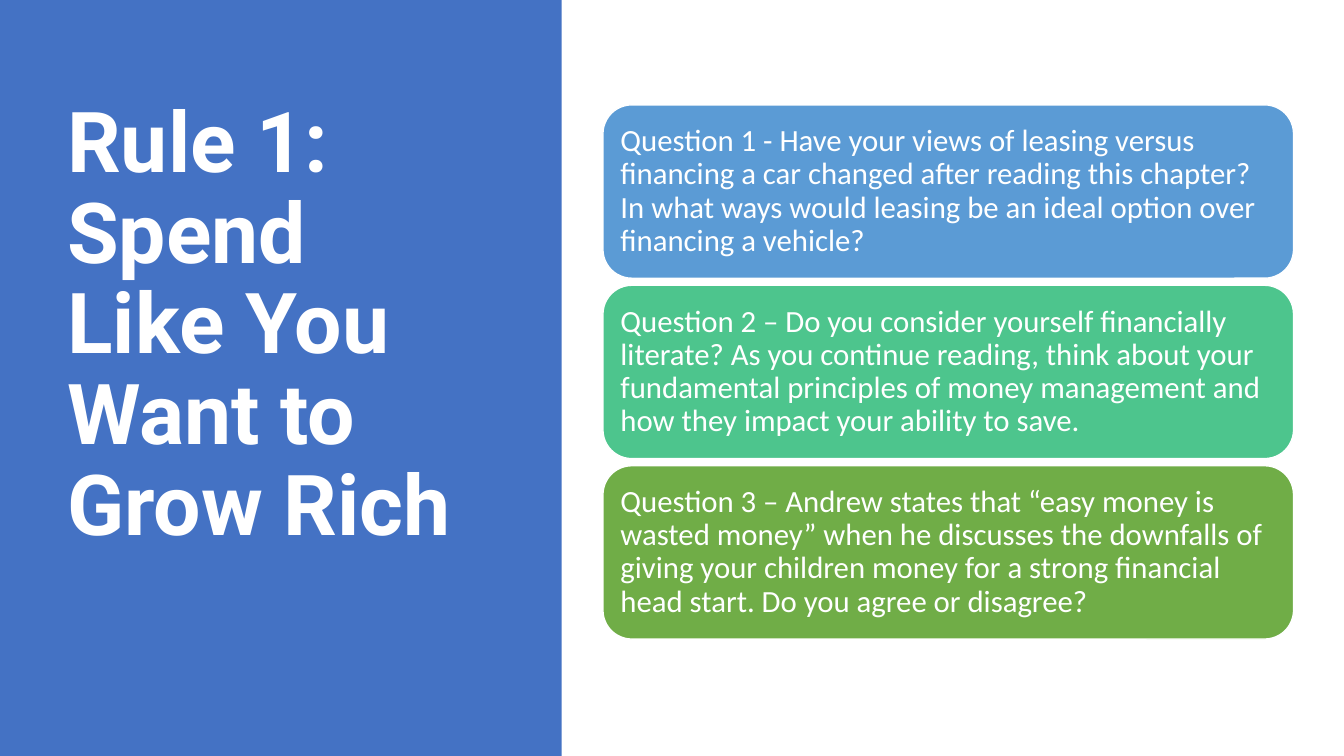
import pptx
import pptx.util
import pptx.dml.color
import pptx.enum.shapes
import pptx.enum.text
from pptx.util import Inches

# Content
TITLE = "Rule 1: Spend Like You Want to Grow Rich"
QUESTIONS = [
    ("Question 1 - Have your views of leasing versus financing a car changed after "
     "reading this chapter? In what ways would leasing be an ideal option over "
     "financing a vehicle?", "5B9BD5"),
    ("Question 2 – Do you consider yourself financially literate? As you continue "
     "reading, think about your fundamental principles of money management and how "
     "they impact your ability to save.", "4DC58D"),
    ("Question 3 – Andrew states that “easy money is wasted money” when he discusses "
     "the downfalls of giving your children money for a strong financial head start. "
     "Do you agree or disagree?", "70AD47"),
]

THEME = {
    "panel": "4472C4", "white": "FFFFFF",
    "title_font": "Roboto", "title_size": 60,
    "body_font": "Calibri", "body_size": 22,
    "line_spacing": 0.9,
}

# Layout in inches
SLIDE_WIDTH, SLIDE_HEIGHT = 13.33, 7.5
PANEL_WIDTH = 5.57
CARD_LEFT, CARD_TOP, CARD_WIDTH, CARD_HEIGHT = 5.98, 1.04, 6.85, 1.72
CARD_GAP = 0.07
CARD_MARGIN = 0.09


def color(value):
    return pptx.dml.color.RGBColor.from_string(value)


def add_block(slide, kind, box, fill, outline=None):
    shape = slide.shapes.add_shape(kind, *map(Inches, box))
    shape.shadow.inherit = False
    shape.fill.solid()
    shape.fill.fore_color.rgb = color(fill)
    if outline:
        shape.line.color.rgb = color(outline)
        shape.line.width = pptx.util.Pt(1)
    else:
        shape.line.fill.background()
    return shape


def write_text(shape, text, font, size, bold=False):
    frame = shape.text_frame
    frame.text = text
    frame.word_wrap = True
    frame.vertical_anchor = pptx.enum.text.MSO_ANCHOR.MIDDLE
    paragraph = frame.paragraphs[0]
    paragraph.alignment = pptx.enum.text.PP_ALIGN.LEFT
    paragraph.line_spacing = THEME["line_spacing"]
    run = paragraph.runs[0]
    run.font.name = font
    run.font.size = pptx.util.Pt(size)
    run.font.bold = bold
    run.font.color.rgb = color(THEME["white"])


def main():
    presentation = pptx.Presentation()
    presentation.slide_width = Inches(SLIDE_WIDTH)
    presentation.slide_height = Inches(SLIDE_HEIGHT)
    slide = presentation.slides.add_slide(presentation.slide_layouts[6])
    shape_kinds = pptx.enum.shapes.MSO_SHAPE

    # Title panel
    add_block(slide, shape_kinds.RECTANGLE, (0, 0, PANEL_WIDTH, SLIDE_HEIGHT), THEME["panel"])
    title = slide.shapes.add_textbox(Inches(0.57), Inches(0.68), Inches(4.16), Inches(5.12))
    write_text(title, TITLE, THEME["title_font"], THEME["title_size"], bold=True)

    # Question cards
    for index, (question, fill) in enumerate(QUESTIONS):
        top = CARD_TOP + index * (CARD_HEIGHT + CARD_GAP)
        card = add_block(slide, shape_kinds.ROUNDED_RECTANGLE,
                         (CARD_LEFT, top, CARD_WIDTH, CARD_HEIGHT), fill, THEME["white"])
        write_text(card, question, THEME["body_font"], THEME["body_size"])
        frame = card.text_frame
        frame.margin_left = frame.margin_right = Inches(CARD_MARGIN)
        frame.margin_top = frame.margin_bottom = Inches(CARD_MARGIN)

    presentation.save("out.pptx")


if __name__ == "__main__":
    main()
